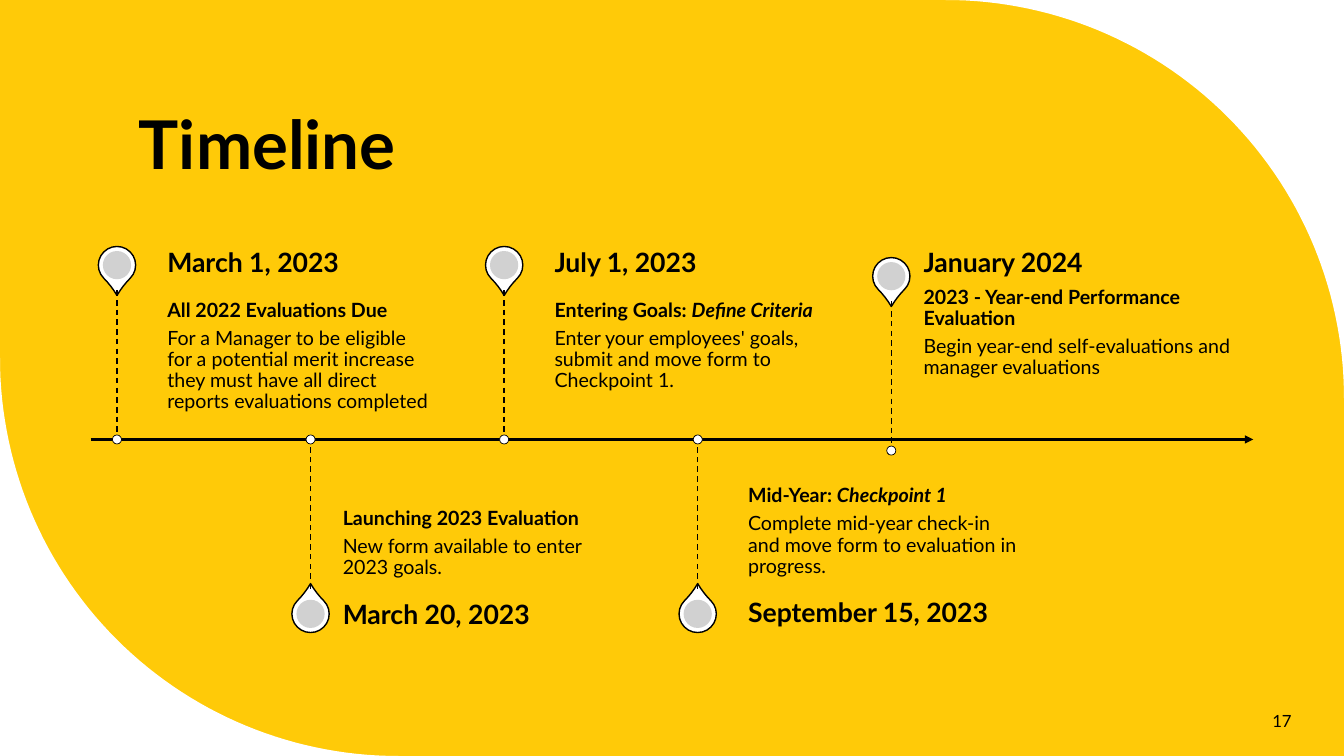
from math import cos, pi, sin

from lxml.etree import SubElement
from pptx import Presentation
from pptx.dml.color import RGBColor
from pptx.enum.dml import MSO_LINE
from pptx.enum.shapes import MSO_CONNECTOR, MSO_SHAPE
from pptx.enum.text import MSO_ANCHOR, PP_ALIGN
from pptx.oxml.ns import qn
from pptx.util import Pt

PX = 9144  # 100 px to the inch
COLORS = {"back": "FFCA08", "white": "FFFFFF", "ink": "000000", "disc": "CCCCCC"}
FONT = "Lato"

HEAD = {"size": Pt(19), "bold": True}
LEAD = {"size": Pt(14), "bold": True}
TERM = {"size": Pt(14), "bold": True, "italic": True}
BODY = {"size": Pt(14), "bold": False}

AXIS = 436
FIRST, STEP = 116, 192  # stem of the first event, gap between stems

# drop: shift of the pin; left: text edge; low: shift of body and head text
EVENTS = [
    {"date": "March 1, 2023", "left": 166,
     "lead": [("All 2022 Evaluations Due", LEAD)],
     "body": "For a Manager to be eligible for a potential merit increase "
             "they must have all direct reports evaluations completed"},
    {"date": "March 20, 2023", "left": 340, "below": True, "low": (1, 2),
     "lead": [("Launching 2023 Evaluation", LEAD)],
     "body": "New form available to enter 2023 goals."},
    {"date": "July 1, 2023", "left": 550,
     "lead": [("Entering Goals: ", LEAD), ("Define Criteria", TERM)],
     "body": "Enter your employees' goals, submit and move form to Checkpoint 1."},
    {"date": "September 15, 2023", "left": 742, "below": True,
     "lead": [("Mid-Year: ", LEAD), ("Checkpoint 1", TERM)],
     "body": "Complete mid-year check-in and move form to evaluation in progress."},
    {"date": "January 2024", "left": 916, "drop": 11, "joined": True,
     "lead": [("2023 - Year-end Performance Evaluation", LEAD)],
     "body": "Begin year-end self-evaluations and manager evaluations"},
]


def color(name):
    return RGBColor.from_string(COLORS[name])


def assign(item, values):
    for key, value in values.items():
        setattr(item, key, value)


def paint(shape, fill, width=0):
    shape.shadow.inherit = False
    shape.fill.solid()
    shape.fill.fore_color.rgb = color(fill)
    if width:
        shape.line.color.rgb = color("ink")
        shape.line.width = Pt(width)
    else:
        shape.line.fill.background()


def add_round(slide, kind, mid, size, fill, width=0):
    x, y = mid
    shape = slide.shapes.add_shape(
        kind, int((x - size / 2) * PX), int((y - size / 2) * PX), size * PX, size * PX)
    paint(shape, fill, width)
    return shape


def add_line(slide, start, end, width):
    line = slide.shapes.add_connector(
        MSO_CONNECTOR.STRAIGHT, *(n * PX for n in (*start, *end)))
    line.line.color.rgb = color("ink")
    line.line.width = Pt(width)
    SubElement(line._element.spPr, qn("a:effectLst"))
    return line


def add_text(slide, box, paras, anchor, inset=(10, 5, 10, 5), gap=0.35,
             align=PP_ALIGN.LEFT, pitch=0.9):
    frame = slide.shapes.add_textbox(*(n * PX for n in box)).text_frame
    sides = ("margin_left", "margin_top", "margin_right", "margin_bottom")
    assign(frame, {"word_wrap": True, "vertical_anchor": anchor,
                   **{side: n * PX for side, n in zip(sides, inset)}})
    for i, runs in enumerate(paras):
        para = frame.paragraphs[0] if i == 0 else frame.add_paragraph()
        assign(para, {"alignment": align, "line_spacing": pitch,
                      "space_after": int(runs[0][1]["size"] * gap)})
        for words, style in runs:
            run = para.add_run()
            run.text = words
            assign(run.font, {"name": FONT, **style})
            run.font.color.rgb = color("ink")


def add_corner(slide, tip, mid, turn):
    """White corner outside a quarter circle that starts at angle turn."""
    radius, steps = 395, 60
    angles = [turn + pi / 2 * i / steps for i in range(steps + 1)]
    arc = [(int((mid[0] + radius * cos(a)) * PX),
            int((mid[1] + radius * sin(a)) * PX)) for a in angles]
    path = slide.shapes.build_freeform(tip[0] * PX, tip[1] * PX)
    path.add_line_segments(arc, close=True)
    paint(path.convert_to_shape(), "white")


def add_pin(slide, x, y, way):
    """Pin, dashed stem and dot; way is -1 above the axis, 1 below."""
    mid = (x, y + way * 173)
    pin = add_round(slide, MSO_SHAPE.TEAR, mid, 37, "white", 1)
    pin.adjustments[0] = 1.15
    pin.rotation = 135 if way < 0 else 315
    disc = add_round(slide, MSO_SHAPE.OVAL, mid, 28, "disc")
    tint = disc._element.spPr.find(qn("a:solidFill"))[0]
    SubElement(tint, qn("a:alpha"), val="90000")
    stem = add_line(slide, (x, y + way * 148), (x, y), 1)
    stem.line.dash_style = MSO_LINE.DASH
    add_round(slide, MSO_SHAPE.OVAL, (x, y), 9, "white", 0.5)


def add_event(slide, x, event):
    left, below = event["left"], event.get("below")
    add_pin(slide, x, AXIS + event.get("drop", 0), 1 if below else -1)
    head = [[(event["date"], HEAD)]]
    body = [event["lead"], [(event["body"], BODY)]]
    flush = (0, 0, 13, 0)
    if event.get("joined"):
        add_text(slide, (left, 263, 328, 97), head + body, MSO_ANCHOR.MIDDLE, flush)
        return
    if below:
        shift, sink = event.get("low", (0, 0))
        tops = AXIS + shift, AXIS + 147 + sink
        anchor, inset = MSO_ANCHOR.BOTTOM, (0, 15, 0, 10)
    else:
        tops = AXIS - 148, AXIS - 200
        anchor, inset = MSO_ANCHOR.TOP, (0, 10, 10, 15)
    add_text(slide, (left, tops[0], 273, 147), body, anchor, inset)
    add_text(slide, (left, tops[1], 273, 52), head, MSO_ANCHOR.MIDDLE, flush)


def add_frame(slide, wide, high):
    """Background, corners, title and page number."""
    slide.background.fill.solid()
    slide.background.fill.fore_color.rgb = color("back")
    add_corner(slide, (wide, 0), (wide - 395, 395), -pi / 2)
    add_corner(slide, (0, high), (395, high - 395), pi / 2)
    add_text(slide, (128, 42, 1069, 145),
             [[("Timeline", {"size": Pt(48), "bold": True})]], MSO_ANCHOR.BOTTOM, gap=0)
    add_text(slide, (1110, 695, 181, 40), [[("17", {"size": Pt(12)})]],
             MSO_ANCHOR.MIDDLE, gap=0, align=PP_ALIGN.RIGHT, pitch=1.0)


def add_timeline(slide):
    axis = add_line(slide, (90, AXIS), (1243, AXIS), 1.5)
    SubElement(axis.line._get_or_add_ln(), qn("a:tailEnd"), type="triangle")
    for i, event in enumerate(EVENTS):
        add_event(slide, FIRST + STEP * i, event)


def main():
    wide, high = 1333, 750
    deck = Presentation()
    assign(deck, {"slide_width": wide * PX, "slide_height": high * PX})
    slide = deck.slides.add_slide(deck.slide_layouts[6])
    add_frame(slide, wide, high)
    add_timeline(slide)
    deck.save("out.pptx")


if __name__ == "__main__":
    main()
